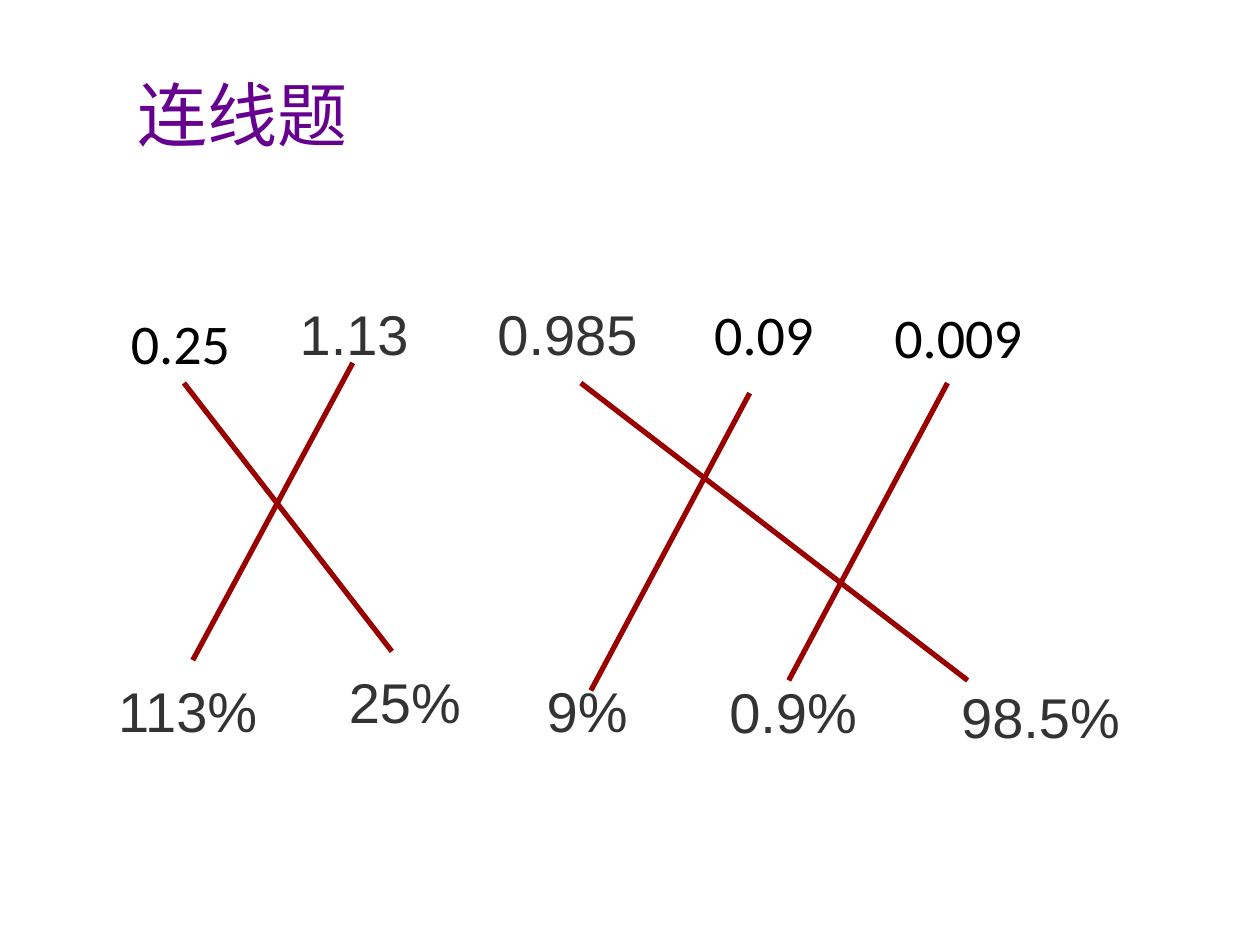
from dataclasses import dataclass

from lxml import etree
from pptx import Presentation
from pptx.dml.color import RGBColor
from pptx.enum import shapes, text
from pptx.oxml import ns
from pptx.util import Inches, Pt


@dataclass(frozen=True)
class Theme:
    """Colours, fonts and type sizes of the slide."""
    title_color: RGBColor = RGBColor(0x66, 0x00, 0x8F)
    gray: RGBColor = RGBColor(0x33, 0x33, 0x33)
    black: RGBColor = RGBColor(0x00, 0x00, 0x00)
    match_color: RGBColor = RGBColor(0x99, 0x00, 0x00)
    title_font: str = "Noto Sans CJK JP"
    title_size: int = 40
    number_size: int = 32
    match_width: int = 3


THEME = Theme()
GRAY_ARIAL = ("Arial", THEME.gray)
BLACK_CALIBRI = ("Calibri", THEME.black)

DECIMALS = [
    ("0.25", (0.94, 2.4, 1.01, 0.64), BLACK_CALIBRI),
    ("1.13", (2.28, 2.33, 1.08, 0.63), GRAY_ARIAL),
    ("0.985", (3.85, 2.33, 1.33, 0.63), GRAY_ARIAL),
    ("0.09", (5.57, 2.33, 1.01, 0.64), BLACK_CALIBRI),
    ("0.009", (7, 2.35, 1.23, 0.64), BLACK_CALIBRI),
]
PERCENTAGES = [
    ("113%", (0.84, 5.32, 1.36, 0.63), GRAY_ARIAL),
    ("25%", (2.67, 5.25, 1.11, 0.63), GRAY_ARIAL),
    ("9%", (4.24, 5.32, 0.86, 0.63), GRAY_ARIAL),
    ("0.9%", (5.69, 5.33, 1.23, 0.64), GRAY_ARIAL),
    ("98.5%", (7.53, 5.37, 1.48, 0.63), GRAY_ARIAL),
]
MATCHES = [
    ((1.46, 3.04), (3.11, 5.17)),
    ((2.8, 2.88), (1.53, 5.24)),
    ((4.61, 3.04), (7.68, 5.4)),
    ((5.95, 3.12), (4.69, 5.48)),
    ((7.52, 3.04), (6.26, 5.4)),
]


def add_label(slide, wording, box, font_name, size, color):
    """Place one unwrapped line of text in the box and return its frame and run."""
    frame = slide.shapes.add_textbox(*map(Inches, box)).text_frame
    frame.word_wrap = False
    run = frame.paragraphs[0].add_run()
    run.text = wording
    run.font.name = font_name
    run.font.size = Pt(size)
    run.font.color.rgb = color
    return frame, run


def add_title(slide, wording, box):
    """Place the centred title with its East Asian font."""
    frame, run = add_label(slide, wording, box, THEME.title_font,
                           THEME.title_size, THEME.title_color)
    frame.paragraphs[0].alignment = text.PP_ALIGN.CENTER
    east_asian = etree.SubElement(run.font._element, ns.qn("a:ea"))
    east_asian.set("typeface", THEME.title_font)


def add_numbers(slide, numbers):
    """Place one row of numbers, each in its own box and style."""
    for wording, box, (font_name, color) in numbers:
        frame, _ = add_label(slide, wording, box, font_name,
                             THEME.number_size, color)
        frame.auto_size = text.MSO_AUTO_SIZE.SHAPE_TO_FIT_TEXT


def add_matches(slide, matches):
    """Draw the lines that pair decimals with percentages."""
    for start, end in matches:
        match = slide.shapes.add_connector(
            shapes.MSO_CONNECTOR.STRAIGHT, *map(Inches, start + end))
        match.line.color.rgb = THEME.match_color
        match.line.width = Pt(THEME.match_width)
        etree.SubElement(match._element.spPr, ns.qn("a:effectLst"))


def main():
    """Build the matching exercise and save it."""
    deck = Presentation()
    deck.slide_width, deck.slide_height = Inches(10), Inches(7.5)
    slide = deck.slides.add_slide(deck.slide_layouts[6])
    add_title(slide, "连线题", (0.9, 0.52, 2.05, 1.28))
    add_numbers(slide, DECIMALS)
    add_numbers(slide, PERCENTAGES)
    add_matches(slide, MATCHES)
    deck.save("out.pptx")


if __name__ == "__main__":
    main()
